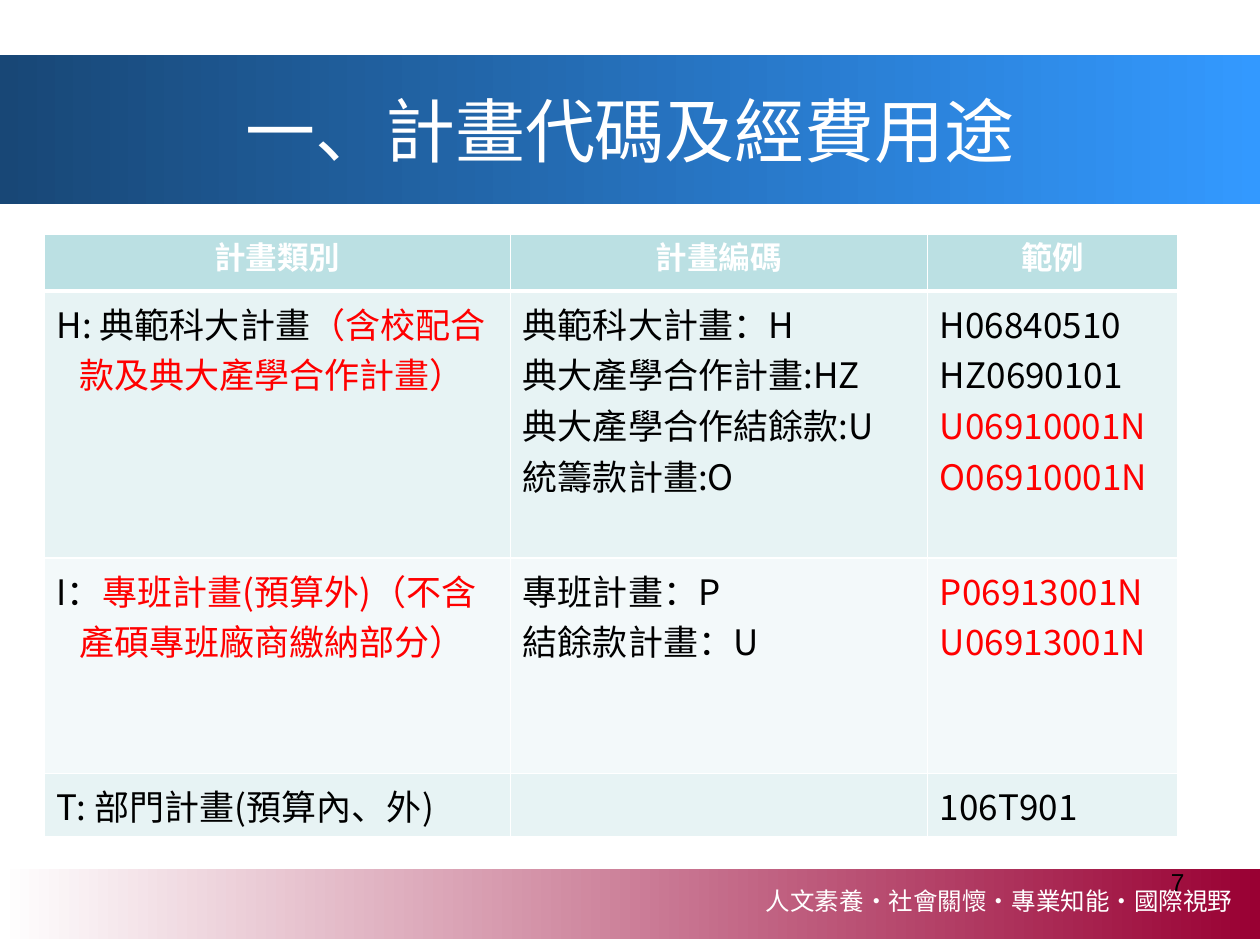
import pptx
import pptx.util
import pptx.dml.color
import pptx.enum.text
import pptx.enum.shapes
import pptx.oxml.ns
from lxml import etree

Inches, Pt = pptx.util.Inches, pptx.util.Pt
ALIGN = pptx.enum.text.PP_ALIGN
SANS, CJK = "Arial", "Noto Sans CJK SC"
COLORS = {
    "white": "FFFFFF", "black": "000000", "red": "FF0000",
    "navy": "184776", "sky": "3399FF", "crimson": "990033",
    "header": "BBE0E3", "band": "E7F3F4", "pale": "F3F9FA",
}
HEADINGS = ["計畫類別", "計畫編碼", "範例"]
COLUMN_WIDTHS = [3.7, 3.31, 1.99]
ROW_HEIGHTS = [0.45, 2.12, 1.71, 0.5]
# Each cell is a list of lines, each line a list of (text, colour) pieces.
PLANS = [
    [
        [[("H: 典範科大計畫", "black"), ("（含校配合", "red")],
         [("款及典大產學合作計畫）", "red")]],
        [[("典範科大計畫：H", "black")], [("典大產學合作計畫:HZ", "black")],
         [("典大產學合作結餘款:U", "black")], [("統籌款計畫:O", "black")]],
        [[("H06840510", "black")], [("HZ0690101", "black")],
         [("U06910001N", "red")], [("O06910001N", "red")]],
    ],
    [
        [[("I：", "black"), ("專班計畫(預算外)（不含", "red")],
         [("產碩專班廠商繳納部分）", "red")]],
        [[("專班計畫：P", "black")], [("結餘款計畫：U", "black")]],
        [[("P06913001N", "red")], [("U06913001N", "red")]],
    ],
    [
        [[("T: 部門計畫(預算內、外)", "black")]],
        [],
        [[("106T901", "black")]],
    ],
]


def rgb(name):
    return pptx.dml.color.RGBColor.from_string(COLORS[name])


def write(paragraph, text, size=20, color="black", font=CJK, bold=False, align=None):
    run = paragraph.add_run()
    run.text = text
    run.font.size = Pt(size)
    run.font.bold = bold
    run.font.name = font
    run.font.color.rgb = rgb(color)
    east_asian = etree.SubElement(run.font._element, pptx.oxml.ns.qn("a:ea"))
    east_asian.set("typeface", font)
    if align is not None:
        paragraph.alignment = align


def fill_gradient(shape, start, end):
    shape.fill.gradient()
    shape.fill.gradient_angle = 0
    for stop, color in zip(shape.fill.gradient_stops, (start, end)):
        stop.color.rgb = rgb(color)


def place(shape, left, top, width, height):
    shape.left, shape.top = Inches(left), Inches(top)
    shape.width, shape.height = Inches(width), Inches(height)


def add_text_box(slide, left, top, width, height):
    box = slide.shapes.add_textbox(
        Inches(left), Inches(top), Inches(width), Inches(height))
    box.text_frame.word_wrap = True
    return box.text_frame.paragraphs[0]


def add_title(slide, text):
    title = slide.shapes.title
    place(title, 0, 0.44, 10, 1.18)
    fill_gradient(title, "navy", "sky")
    title.text_frame.vertical_anchor = pptx.enum.text.MSO_ANCHOR.MIDDLE
    write(title.text_frame.paragraphs[0], text, size=40, color="white",
          align=ALIGN.CENTER)


def add_footer(slide):
    band = slide.shapes.add_shape(
        pptx.enum.shapes.MSO_SHAPE.RECTANGLE,
        Inches(0), Inches(6.9), Inches(10), Inches(0.55))
    band.shadow.inherit = False
    band.line.fill.background()
    fill_gradient(band, "white", "crimson")
    motto = add_text_box(slide, 5.98, 6.98, 4.02, 0.33)
    for i, value in enumerate(["人文素養", "社會關懷", "專業知能", "國際視野"]):
        if i:
            write(motto, "‧", size=14, color="white")
        write(motto, value, size=14, color="white", font=SANS)


def style_cell(cell, color, top=1, bottom=1):
    """Give a cell white borders (widths in points) and a plain fill."""
    qn = pptx.oxml.ns.qn
    properties = cell._tc.get_or_add_tcPr()
    for side, width in zip("LRTB", (1, 1, top, bottom)):
        line = etree.SubElement(properties, qn(f"a:ln{side}"), w=str(Pt(width)))
        solid = etree.SubElement(line, qn("a:solidFill"))
        etree.SubElement(solid, qn("a:srgbClr"), val=COLORS["white"])
    cell.fill.solid()
    cell.fill.fore_color.rgb = rgb(color)


def write_lines(cell, lines, hanging):
    frame = cell.text_frame
    for i, pieces in enumerate(lines):
        paragraph = frame.add_paragraph() if i else frame.paragraphs[0]
        if i and hanging:
            paragraph._p.get_or_add_pPr().set("marL", str(Inches(0.18)))
        for text, color in pieces:
            write(paragraph, text, color=color)


def add_plan_table(slide):
    table = slide.shapes.add_table(
        len(ROW_HEIGHTS), len(COLUMN_WIDTHS), Inches(0.35), Inches(1.86),
        Inches(sum(COLUMN_WIDTHS)), Inches(sum(ROW_HEIGHTS))).table
    for column, width in zip(table.columns, COLUMN_WIDTHS):
        column.width = Inches(width)
    for row, height in zip(table.rows, ROW_HEIGHTS):
        row.height = Inches(height)
    for c, heading in enumerate(HEADINGS):
        cell = table.cell(0, c)
        style_cell(cell, "header", bottom=3)
        write(cell.text_frame.paragraphs[0], heading, size=18, color="white",
              font=SANS, bold=True, align=ALIGN.CENTER)
    for r, plan in enumerate(PLANS, start=1):
        for c, lines in enumerate(plan):
            cell = table.cell(r, c)
            style_cell(cell, "band" if r % 2 else "pale", top=3 if r == 1 else 1)
            write_lines(cell, lines, hanging=c == 0)


def main():
    deck = pptx.Presentation()
    deck.slide_width, deck.slide_height = Inches(10), Inches(7.5)
    slide = deck.slides.add_slide(deck.slide_layouts[5])
    add_footer(slide)
    add_title(slide, "一、計畫代碼及經費用途")
    add_plan_table(slide)
    page_number = add_text_box(slide, 7.17, 6.83, 2.33, 0.52)
    write(page_number, "7", size=14, font=SANS, align=ALIGN.RIGHT)
    deck.save("out.pptx")


if __name__ == "__main__":
    main()
